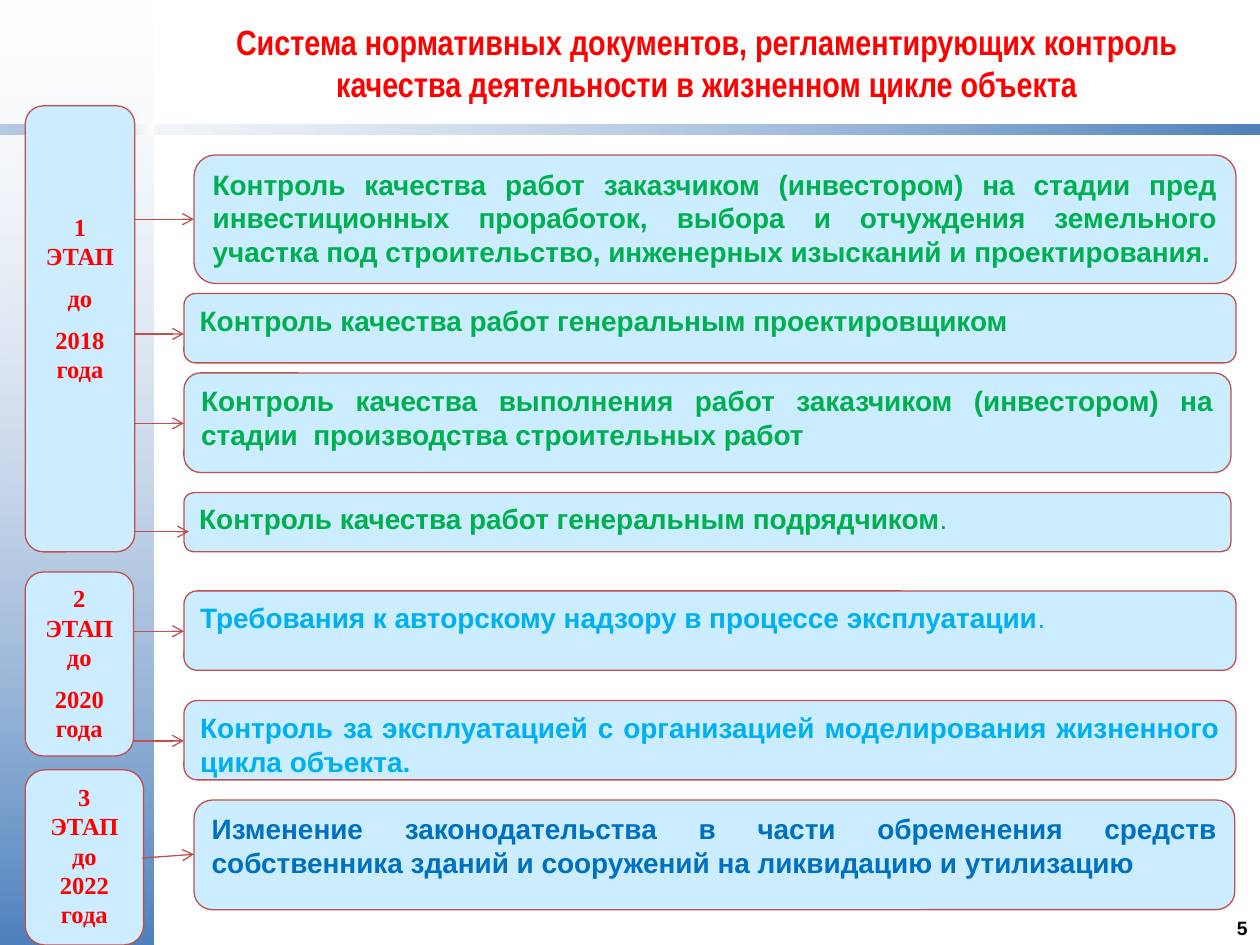
from lxml.etree import SubElement
from pptx import Presentation
from pptx.dml.color import RGBColor
from pptx.enum.shapes import MSO_CONNECTOR as Connector, MSO_SHAPE as Shape
from pptx.enum.text import MSO_ANCHOR as Anchor, PP_ALIGN as Align
from pptx.oxml.ns import qn
from pptx.util import Inches, Pt

WHITE = RGBColor(0xFF, 0xFF, 0xFF)
BLACK = RGBColor(0, 0, 0)
BLUE = RGBColor(0x4F, 0x81, 0xBD)
PALE_BLUE = RGBColor(0xCC, 0xEC, 0xFF)
OUTLINE = RGBColor(0xC0, 0x50, 0x4D)
RED = RGBColor(0xFF, 0, 0)
GREEN = RGBColor(0, 0xB0, 0x50)
SKY = RGBColor(0, 0xB0, 0xF0)
NAVY = RGBColor(0, 0x70, 0xC0)

TITLE = ("Система нормативных документов, регламентирующих контроль "
         "качества деятельности в жизненном цикле объекта")

STAGES = [
    ((0.2, 0.84, 0.87, 3.54), ["1 ЭТАП", "до", "2018 года"], 7, 0.8),
    ((0.2, 4.54, 0.86, 1.46), ["2 ЭТАП до", "2020 года"], 7, 0.05),
    ((0.2, 6.11, 0.94, 1.39), ["3 ЭТАП", "до", "2022 года"], 0, 0.05),
]

CONTROLS = [
    ((1.54, 1.23, 8.27, 1.02), GREEN,
     "Контроль качества работ заказчиком (инвестором) на стадии пред "
     "инвестиционных проработок, выбора и отчуждения земельного участка "
     "под строительство, инженерных изысканий и проектирования.", ""),
    ((1.46, 2.33, 8.35, 0.55), GREEN,
     "Контроль качества работ генеральным проектировщиком", ""),
    ((1.46, 2.96, 8.31, 0.79), GREEN,
     "Контроль качества выполнения работ заказчиком (инвестором) на "
     "стадии  производства строительных работ", ""),
    ((1.46, 3.91, 8.31, 0.47), GREEN,
     "Контроль качества работ генеральным подрядчиком", "."),
    ((1.46, 4.69, 8.35, 0.63), SKY,
     "Требования к авторскому надзору в процессе эксплуатации", "."),
    ((1.46, 5.56, 8.35, 0.63), SKY,
     "Контроль за эксплуатацией с организацией моделирования жизненного "
     "цикла объекта.", ""),
    ((1.54, 6.35, 8.26, 0.87), NAVY,
     "Изменение законодательства в части обременения средств собственника "
     "зданий и сооружений на ликвидацию и утилизацию", ""),
]

ARROWS = [
    (1.06, 1.74, 1.54, 1.74),
    (1.06, 2.65, 1.46, 2.65),
    (1.06, 3.36, 1.46, 3.36),
    (1.06, 4.22, 1.5, 4.22),
    (1.06, 5.01, 1.46, 5.01),
    (1.06, 5.88, 1.46, 5.88),
    (1.13, 6.81, 1.54, 6.78),
]


def inches(box):
    """Turn a tuple of numbers into lengths."""
    return [Inches(value) for value in box]


def add_run(paragraph, text, size, font_name, color, bold=True):
    """Append one formatted run."""
    run = paragraph.add_run()
    run.text = text
    run.font.size = Pt(size)
    run.font.name = font_name
    run.font.bold = bold
    run.font.color.rgb = color


def add_gradient(slide, box, start, end, angle, opacity):
    """Draw a rectangle fading between two colours, its start see-through."""
    shape = slide.shapes.add_shape(Shape.RECTANGLE, *inches(box))
    shape.shadow.inherit = False
    shape.line.fill.background()
    shape.fill.gradient()
    shape.fill.gradient_angle = angle
    for stop, color in zip(shape.fill.gradient_stops, (start, end)):
        stop.color.rgb = color
    first_color = next(shape.element.iter(qn("a:srgbClr")))
    SubElement(first_color, qn("a:alpha"), val=str(opacity * 1000))


def add_background(slide):
    """Draw the side panel and the band under the title."""
    add_gradient(slide, (0, 0, 1.22, 7.5), WHITE, BLUE, 270, 24)
    add_gradient(slide, (0, 0.99, 10, 0.08), WHITE, BLUE, 0, 54)
    add_gradient(slide, (0, 0.99, 1.22, 0.08), BLUE, WHITE, 0, 40)


def add_label(slide, box, text, size, font_name, color, align, anchor):
    """Place one line of free text in its box."""
    frame = slide.shapes.add_textbox(*inches(box)).text_frame
    frame.word_wrap = True
    frame.vertical_anchor = anchor
    paragraph = frame.paragraphs[0]
    paragraph.alignment = align
    add_run(paragraph, text, size, font_name, color)


def add_panel(slide, box):
    """Draw a rounded panel and return its text frame."""
    shape = slide.shapes.add_shape(Shape.ROUNDED_RECTANGLE, *inches(box))
    shape.shadow.inherit = False
    shape.fill.solid()
    shape.fill.fore_color.rgb = PALE_BLUE
    shape.line.color.rgb = OUTLINE
    shape.line.width = Pt(0.75)
    frame = shape.text_frame
    frame.word_wrap = True
    frame.vertical_anchor = Anchor.TOP
    return frame


def add_stage(slide, box, lines, gap, top_margin):
    """Place a stage panel with its centred lines."""
    frame = add_panel(slide, box)
    frame.margin_top = Inches(top_margin)
    for index, line in enumerate(lines):
        paragraph = frame.add_paragraph() if index else frame.paragraphs[0]
        paragraph.alignment = Align.CENTER
        if index:
            paragraph.space_before = Pt(gap)
        add_run(paragraph, line, 14, "Times New Roman", RED)


def add_control(slide, box, color, text, ending):
    """Place a control panel with justified text."""
    paragraph = add_panel(slide, box).paragraphs[0]
    paragraph.alignment = Align.JUSTIFY
    add_run(paragraph, text, 16, "Arial", color)
    if ending:
        add_run(paragraph, ending, 16, "Arial", color, bold=False)


def add_arrow(slide, ends):
    """Draw an arrow from a stage to a control."""
    arrow = slide.shapes.add_connector(Connector.STRAIGHT, *inches(ends))
    arrow.line.color.rgb = OUTLINE
    arrow.line.width = Pt(0.75)
    SubElement(arrow.line._get_or_add_ln(), qn("a:tailEnd"), type="arrow")
    SubElement(arrow.element.spPr, qn("a:effectLst"))


def main():
    """Build and save the slide."""
    presentation = Presentation()
    presentation.slide_width = Inches(10)
    presentation.slide_height = Inches(7.5)
    slide = presentation.slides.add_slide(presentation.slide_layouts[6])
    add_background(slide)
    add_label(slide, (9.61, 7.22, 0.39, 0.28), "5", 11, "Arial", BLACK,
              Align.RIGHT, Anchor.TOP)
    add_label(slide, (1.38, 0, 8.46, 0.99), TITLE, 20, "Arial Narrow", RED,
              Align.CENTER, Anchor.MIDDLE)
    for control in CONTROLS:
        add_control(slide, *control)
    for stage in STAGES:
        add_stage(slide, *stage)
    for ends in ARROWS:
        add_arrow(slide, ends)
    presentation.save("out.pptx")


if __name__ == "__main__":
    main()
